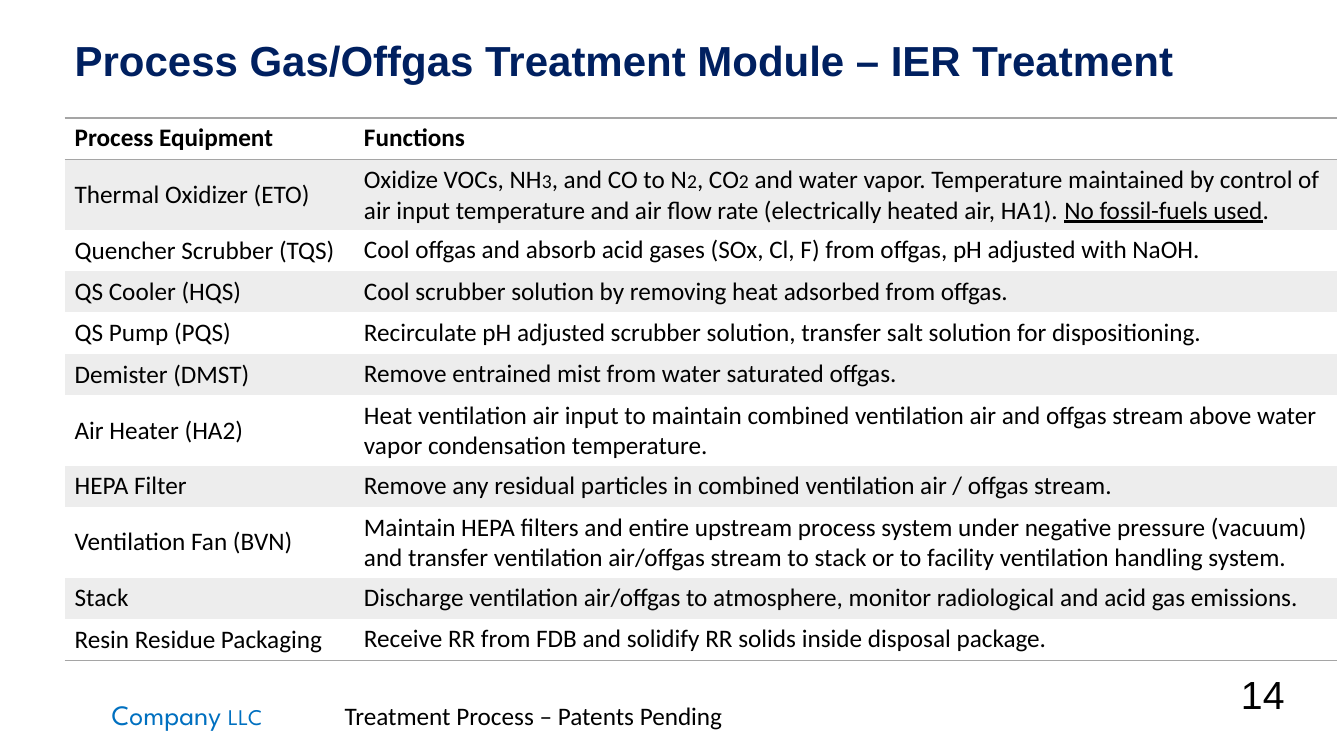
import pptx
import pptx.util
import pptx.dml.color
import pptx.enum.text
import pptx.oxml
import pptx.oxml.ns
from lxml import etree

Inches = pptx.util.Inches
Pt = pptx.util.Pt
RGBColor = pptx.dml.color.RGBColor
Anchor = pptx.enum.text.MSO_ANCHOR

NAVY = RGBColor(0x00, 0x20, 0x60)
BLUE = RGBColor(0x00, 0x70, 0xC0)
BLACK = RGBColor(0x00, 0x00, 0x00)
GRAY = RGBColor(0xA5, 0xA5, 0xA5)
BAND = RGBColor(0xED, 0xED, 0xED)
PLAIN = "{2D5ABB26-0587-4C30-8999-92F81FD0307C}"

ROWS = [
    ("Process Equipment", "Functions"),
    ("Thermal Oxidizer (ETO)", [
        ("Oxidize VOCs, NH", ""), ("3", "small"), (", and CO to N", ""),
        ("2", "small"), (", CO", ""), ("2", "small"),
        (" and water vapor. Temperature maintained by control of air input "
         "temperature and air flow rate (electrically heated air, HA1). ", ""),
        ("No fossil-fuels used", "under"), (".", "")]),
    ("Quencher Scrubber (TQS)",
     "Cool offgas and absorb acid gases (SOx, Cl, F) from offgas, pH adjusted with NaOH."),
    ("QS Cooler (HQS)", "Cool scrubber solution by removing heat adsorbed from offgas."),
    ("QS Pump (PQS)",
     "Recirculate pH adjusted scrubber solution, transfer salt solution for dispositioning."),
    ("Demister (DMST)", "Remove entrained mist from water saturated offgas."),
    ("Air Heater (HA2)",
     "Heat ventilation air input to maintain combined ventilation air and offgas "
     "stream above water vapor condensation temperature."),
    ("HEPA Filter", "Remove any residual particles in combined ventilation air / offgas stream."),
    ("Ventilation Fan (BVN)",
     "Maintain HEPA filters and entire upstream process system under negative pressure "
     "(vacuum) and transfer ventilation air/offgas stream to stack or to facility "
     "ventilation handling system."),
    ("Stack",
     "Discharge ventilation air/offgas to atmosphere, monitor radiological and acid gas emissions."),
    ("Resin Residue Packaging",
     "Receive RR from FDB and solidify RR solids inside disposal package."),
]


def style(font, name, size, color, bold=False):
    font.name = name
    font.size = Pt(size)
    font.color.rgb = color
    font.bold = bold


def add_title(slide, box, text):
    title = slide.shapes.title
    title.left, title.top, title.width, title.height = map(Inches, box)
    frame = title.text_frame
    frame.text = text
    frame.word_wrap = True
    frame.auto_size = pptx.enum.text.MSO_AUTO_SIZE.NONE
    frame.vertical_anchor = Anchor.MIDDLE
    para = frame.paragraphs[0]
    para.alignment = pptx.enum.text.PP_ALIGN.LEFT
    para.line_spacing = 0.9
    style(para.font, "Arial", 30, NAVY, True)


def add_rule(cell, side):
    props = cell._tc.get_or_add_tcPr()
    props.append(pptx.oxml.parse_xml(
        f'<a:{side} {pptx.oxml.ns.nsdecls("a")} w="12700"><a:solidFill>'
        f'<a:srgbClr val="{GRAY}"/></a:solidFill></a:{side}>'))


def fill_cell(cell, text, bold):
    para = cell.text_frame.paragraphs[0]
    style(para.font, "Calibri", 18, BLACK, bold)
    parts = [(text, "")] if isinstance(text, str) else text
    for words, look in parts:
        run = para.add_run()
        run.text = words
        if look == "small":
            run.font.size = Pt(14)
        elif look == "under":
            run.font.underline = True


def add_grid(slide, box, widths, height):
    frame = slide.shapes.add_table(len(ROWS), len(widths), *map(Inches, box))
    table = frame.table
    table._tbl.tblPr.find(pptx.oxml.ns.qn("a:tableStyleId")).text = PLAIN
    for col, width in zip(table.columns, widths):
        col.width = Inches(width)
    last = len(ROWS) - 1
    for r, texts in enumerate(ROWS):
        table.rows[r].height = Inches(height)
        for c, text in enumerate(texts):
            cell = table.cell(r, c)
            fill_cell(cell, text, r == 0)
            if r and c == 0:
                cell.vertical_anchor = Anchor.MIDDLE
            if r == 0:
                add_rule(cell, "lnT")
            if r in (0, last):
                add_rule(cell, "lnB")
            if r % 2:
                cell.fill.solid()
                cell.fill.fore_color.rgb = BAND
            else:
                cell.fill.background()


def add_box(slide, box):
    frame = slide.shapes.add_textbox(*map(Inches, box)).text_frame
    frame.word_wrap = True
    return frame.paragraphs[0]


def add_foot(slide, box):
    para = add_box(slide, box)
    props = para._p.get_or_add_pPr()
    tabs = etree.SubElement(props, pptx.oxml.ns.qn("a:tabLst"))
    etree.SubElement(tabs, pptx.oxml.ns.qn("a:tab"), pos=str(Inches(2.31)), algn="l")
    for text, name, size, color in (
            ("Company ", "League Spartan", 20, BLUE),
            ("LLC", "League Spartan", 16, BLUE),
            ("\tTreatment Process – Patents Pending", "Calibri", 18, BLACK)):
        run = para.add_run()
        run.text = text
        style(run.font, name, size, color)


def add_page(slide, box, text):
    para = add_box(slide, box)
    para.text = text
    style(para.font, "Arial", 28, BLACK)


def main():
    deck = pptx.Presentation()
    deck.slide_width, deck.slide_height = Inches(13.33), Inches(7.5)
    slide = deck.slides.add_slide(deck.slide_layouts[5])
    add_title(slide, (0.64, 0.08, 12.48, 1.09),
              "Process Gas/Offgas Treatment Module – IER Treatment")
    add_foot(slide, (1.01, 6.87, 7.99, 0.44))
    add_page(slide, (12.21, 6.6, 0.98, 0.57), "14")
    add_grid(slide, (0.64, 1.17, 12.62, 4.51), (2.87, 9.75), 0.41)
    deck.save("out.pptx")


if __name__ == "__main__":
    main()
